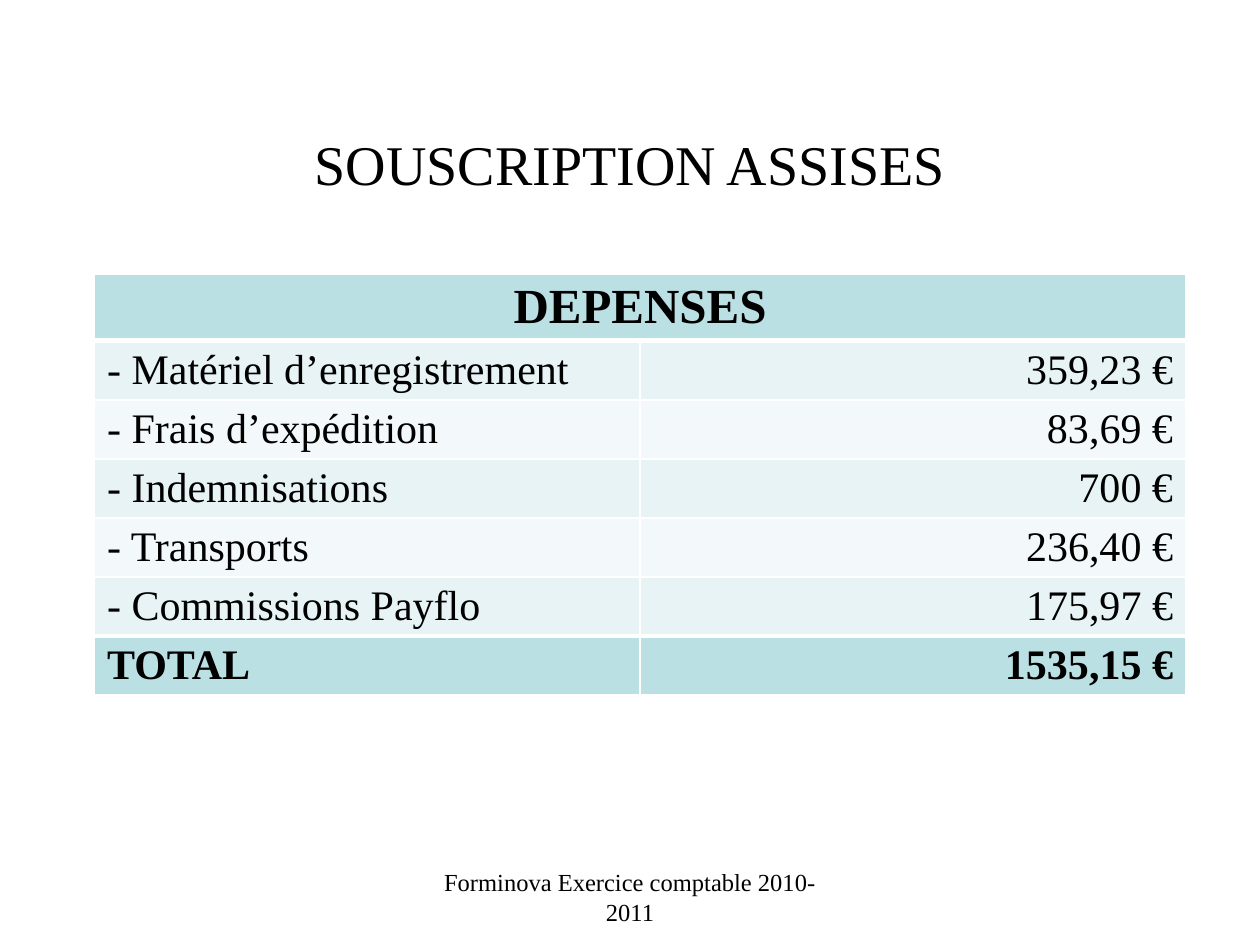
"""Build the expense slide of the yearly accounts."""
import dataclasses

import lxml.etree
import pptx
import pptx.dml.color
import pptx.enum.text
import pptx.oxml.ns
import pptx.util

Pt = pptx.util.Pt
Align = pptx.enum.text.PP_ALIGN
Anchor = pptx.enum.text.MSO_ANCHOR


@dataclasses.dataclass(frozen=True)
class Theme:
    face: str = "Times New Roman"
    ink: str = "000000"
    line: str = "FFFFFF"
    strong: str = "BBE0E3"
    bands: tuple = ("E7F3F4", "F3F9FA")
    title: int = 32
    head: int = 28
    body: int = 24
    foot: int = 14
    thin: int = 1
    thick: int = 3


class Deck:
    def __init__(self, theme):
        self.theme = theme
        self.deck = pptx.Presentation()
        self.deck.slide_width, self.deck.slide_height = Pt(720), Pt(540)
        self.slide = self.deck.slides.add_slide(self.deck.slide_layouts[5])

    def color(self, code):
        return pptx.dml.color.RGBColor.from_string(code)

    def style(self, frame, text, size, align, bold=False):
        frame.text = text
        para = frame.paragraphs[0]
        para.alignment = align
        font = para.font
        font.name, font.size, font.bold = self.theme.face, Pt(size), bold
        font.color.rgb = self.color(self.theme.ink)

    def place(self, shape, box):
        shape.left, shape.top, shape.width, shape.height = map(Pt, box)

    def title(self, text, box):
        shape = self.slide.shapes.title
        self.place(shape, box)
        shape.text_frame.vertical_anchor = Anchor.MIDDLE
        self.style(shape.text_frame, text, self.theme.title, Align.CENTER)

    def label(self, text, box):
        frame = self.slide.shapes.add_textbox(*map(Pt, box)).text_frame
        frame.word_wrap = True
        self.style(frame, text, self.theme.foot, Align.CENTER)

    def border(self, cell, top, bottom):
        thin = self.theme.thin
        props = cell._tc.get_or_add_tcPr()
        sides = {"lnL": thin, "lnR": thin, "lnT": top, "lnB": bottom}
        for spot, (tag, width) in enumerate(sides.items()):
            line = lxml.etree.Element(pptx.oxml.ns.qn(f"a:{tag}"), w=str(Pt(width)))
            fill = lxml.etree.SubElement(line, pptx.oxml.ns.qn("a:solidFill"))
            lxml.etree.SubElement(fill, pptx.oxml.ns.qn("a:srgbClr"), val=self.theme.line)
            props.insert(spot, line)

    def table(self, head, items, total, box, high):
        theme = self.theme
        rows = [(head, ""), *items, total]
        last = len(rows) - 1
        shape = self.slide.shapes.add_table(len(rows), 2, *map(Pt, box))
        grid = shape.table
        for row, texts in enumerate(rows):
            grid.rows[row].height = Pt(high)
            edge = row in (0, last)
            shade = theme.strong if edge else theme.bands[(row - 1) % 2]
            top = theme.thick if row in (1, last) else theme.thin
            bottom = theme.thick if row in (0, last - 1) else theme.thin
            size = theme.body if row else theme.head
            for col, text in enumerate(texts):
                cell = grid.cell(row, col)
                cell.fill.solid()
                cell.fill.fore_color.rgb = self.color(shade)
                self.border(cell, top, bottom)
                align = (Align.LEFT, Align.RIGHT)[col] if row else Align.CENTER
                self.style(cell.text_frame, text, size, align, edge)
        grid.cell(0, 0).merge(grid.cell(0, 1))
        self.place(shape, box)


def main():
    deck = Deck(Theme())
    deck.title("SOUSCRIPTION ASSISES", (54, 48, 612, 90))
    costs = [
        ("- Matériel d’enregistrement", "359,23 €"),
        ("- Frais d’expédition", "83,69 €"),
        ("- Indemnisations", "700 €"),
        ("- Transports", "236,40 €"),
        ("- Commissions Payflo", "175,97 €"),
    ]
    deck.table("DEPENSES", costs, ("TOTAL", "1535,15 €"), (54, 156.5, 623.5, 257), 29.5)
    deck.label("Forminova Exercice comptable 2010-2011", (246, 492, 228, 36))
    deck.deck.save("out.pptx")


if __name__ == "__main__":
    main()
